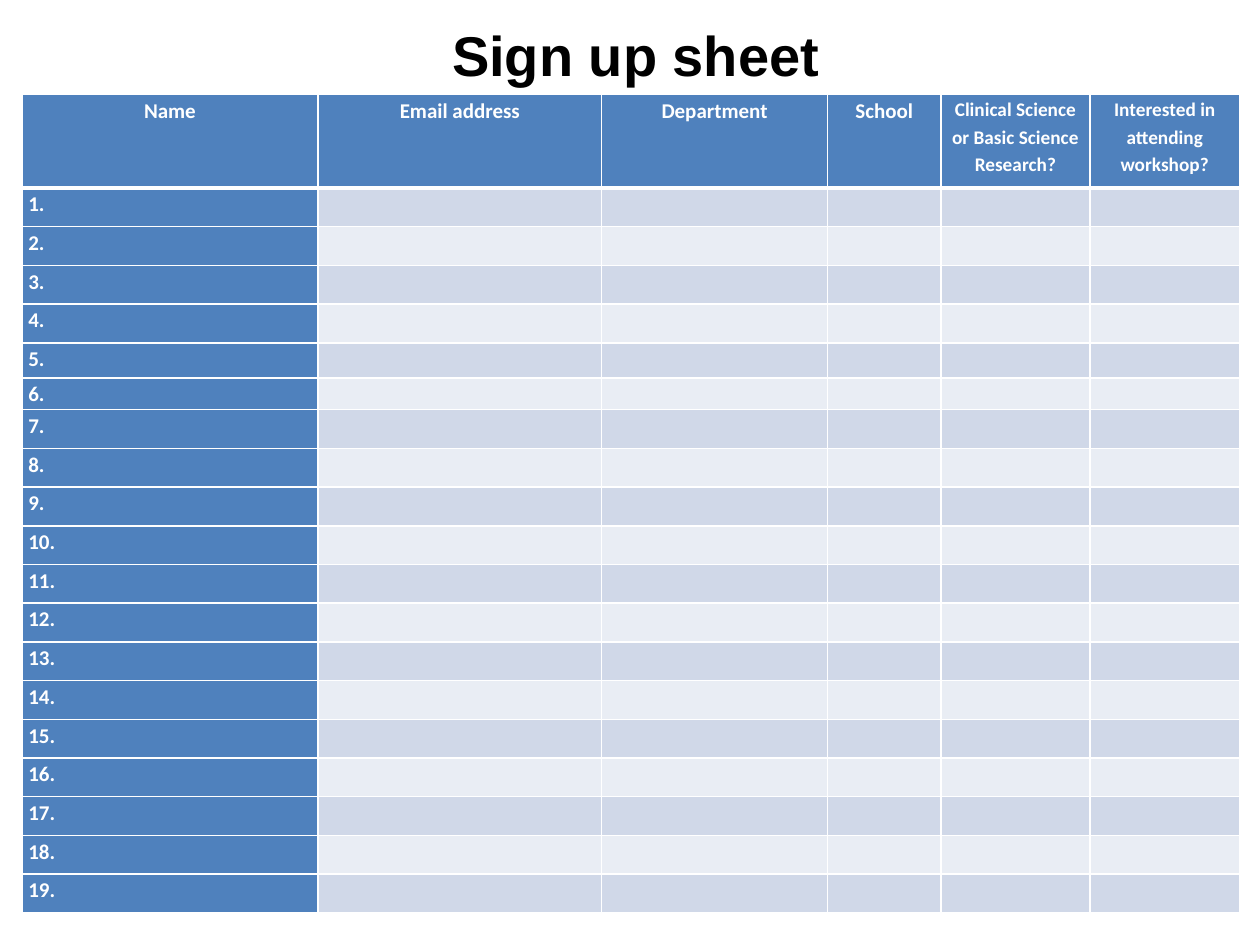
from dataclasses import dataclass

from lxml.etree import SubElement
from pptx import Presentation
from pptx.dml.color import RGBColor
from pptx.enum.text import MSO_ANCHOR, MSO_AUTO_SIZE, PP_ALIGN
from pptx.oxml.ns import qn
from pptx.util import Cm, Pt


@dataclass(frozen=True)
class Theme:
    black: RGBColor = RGBColor.from_string("000000")
    white: RGBColor = RGBColor.from_string("FFFFFF")
    blue: RGBColor = RGBColor.from_string("4F81BD")
    bands: tuple = (RGBColor.from_string("E9EDF4"), RGBColor.from_string("D0D8E8"))
    title_size: Pt = Pt(32)
    body_size: Pt = Pt(12)
    small_size: Pt = Pt(11)
    grid_line: Pt = Pt(1)
    header_line: Pt = Pt(3)


def apply_format(target, values):
    for name, value in values.items():
        setattr(target, name, value)


def add_border(cell, side, width, color):
    """Draw one side of a cell: L, R, T or B, called in that order."""
    line = SubElement(cell._tc.get_or_add_tcPr(), qn(f"a:ln{side}"), w=str(width))
    fill = SubElement(line, qn("a:solidFill"))
    SubElement(fill, qn("a:srgbClr"), val=str(color))


theme = Theme()
deck = Presentation()
deck.slide_width, deck.slide_height = Cm(25.4), Cm(19.05)
page = deck.slides.add_slide(deck.slide_layouts[5])

# Title
title = page.shapes.title
apply_format(title, {"left": Cm(8.86), "top": Cm(0.28), "width": Cm(8.28), "height": Cm(1.63)})
frame = title.text_frame
frame.text = "Sign up sheet"
apply_format(frame, {
    "word_wrap": False,
    "auto_size": MSO_AUTO_SIZE.SHAPE_TO_FIT_TEXT,
    "vertical_anchor": MSO_ANCHOR.TOP,
})
para = frame.paragraphs[0]
para.alignment = PP_ALIGN.LEFT
span = para.runs[0]
apply_format(span.font, {"name": "Arial", "size": theme.title_size, "bold": True})
span.font.color.rgb = theme.black

# Sign-up table
headers = [
    ("Name", 5.97, theme.body_size),
    ("Email address", 5.72, theme.body_size),
    ("Department", 4.55, theme.body_size),
    ("School", 2.29, theme.body_size),
    ("Clinical Science or Basic Science Research?", 3.0, theme.small_size),
    ("Interested in attending workshop?", 3.02, theme.small_size),
]
entries = 19
row_heights = [1.88] + [0.78] * entries
row_heights[6], row_heights[7] = 0.64, 0.78
row_heights[5] = 0.71

table = page.shapes.add_table(
    entries + 1, len(headers), Cm(0.44), Cm(1.91),
    Cm(sum(width for _, width, _ in headers)), Cm(sum(row_heights)),
).table
apply_format(table, {"first_row": False, "horz_banding": False})
for column, (_, width, _) in zip(table.columns, headers):
    column.width = Cm(width)
for row, height in zip(table.rows, row_heights):
    row.height = Cm(height)

for row_index, row in enumerate(table.rows):
    is_header = row_index == 0
    for cell, (label, _, header_size) in zip(row.cells, headers):
        is_number = cell is not None and not is_header and label == "Name"
        apply_format(cell, {
            "margin_left": Cm(0.13), "margin_right": Cm(0.13),
            "margin_top": 0, "margin_bottom": 0,
            "vertical_anchor": MSO_ANCHOR.TOP,
        })
        top_line = theme.header_line if row_index == 1 else theme.grid_line
        bottom_line = theme.header_line if is_header else theme.grid_line
        for side, width in (("L", theme.grid_line), ("R", theme.grid_line),
                            ("T", top_line), ("B", bottom_line)):
            add_border(cell, side, width, theme.white)
        cell.fill.solid()
        cell.fill.fore_color.rgb = (
            theme.blue if is_header or is_number else theme.bands[row_index % 2]
        )

        para = cell.text_frame.paragraphs[0]
        if not (is_header or is_number):
            # An empty cell needs a small type size to keep its row height
            SubElement(para._p, qn("a:endParaRPr"), sz=str(int(theme.body_size.pt * 100)))
            continue
        para.line_spacing = 1.15
        para.alignment = PP_ALIGN.CENTER if is_header else PP_ALIGN.LEFT
        span = para.add_run()
        span.text = label if is_header else f"{row_index}."
        size = header_size if is_header else theme.body_size
        apply_format(span.font, {"name": "Calibri", "size": size, "bold": True})
        span.font.color.rgb = theme.white

deck.save("out.pptx")
